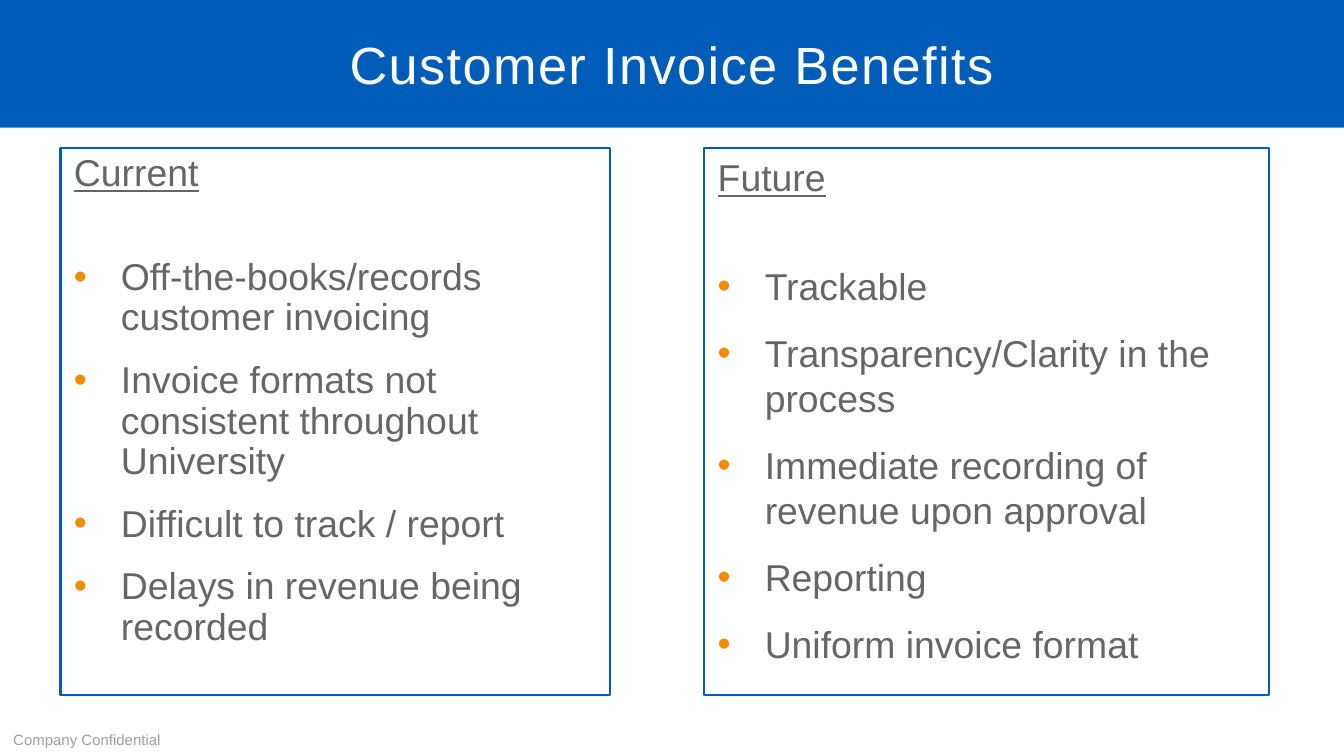
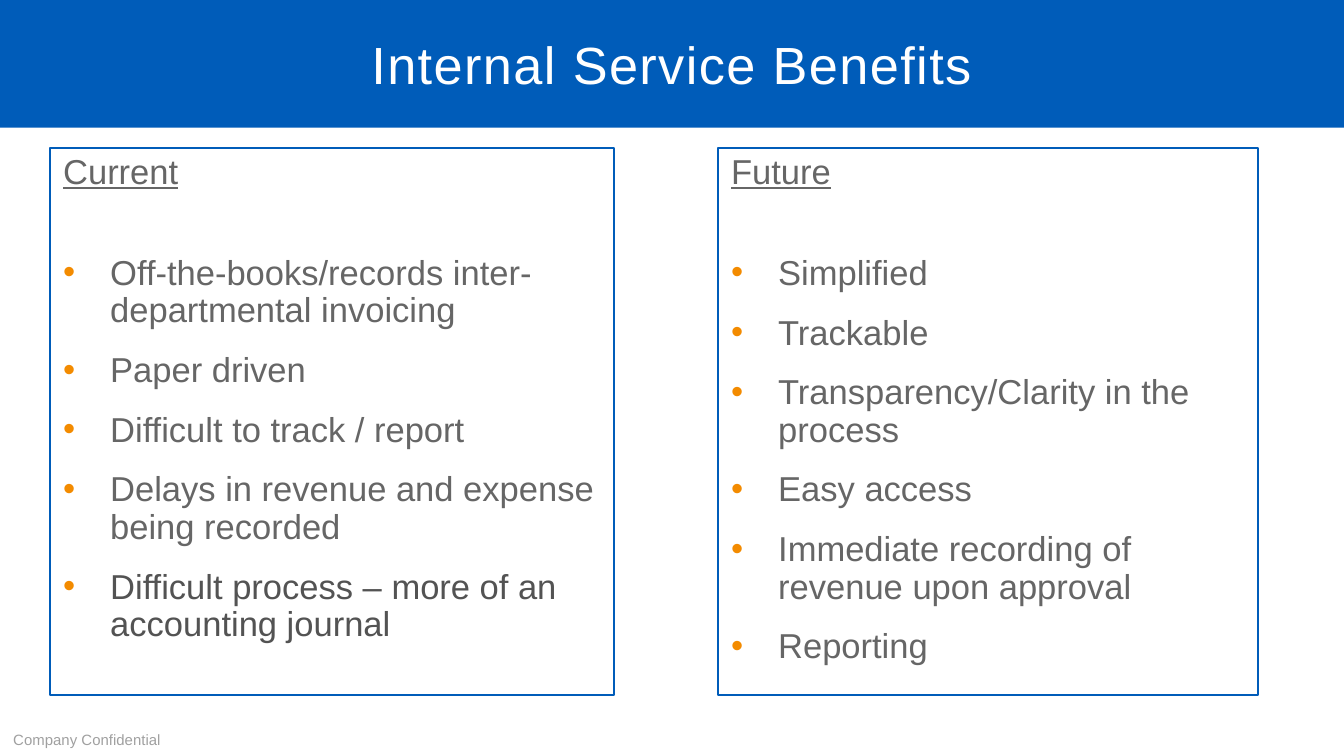
from lxml import etree
from pptx import Presentation
from pptx.dml.color import RGBColor
from pptx.enum.text import MSO_ANCHOR, MSO_AUTO_SIZE, PP_ALIGN
from pptx.oxml.ns import qn
from pptx.util import Emu, Pt

TOP, MIDDLE, BOTTOM = MSO_ANCHOR.TOP, MSO_ANCHOR.MIDDLE, MSO_ANCHOR.BOTTOM
CENTER, LEFT = PP_ALIGN.CENTER, PP_ALIGN.LEFT
NO_FIT = MSO_AUTO_SIZE.NONE
TWO_CONTENT = 3

# Shared look: 200 px to the inch
PX = 4572
FONT = "Arial"
COLORS = {
    "blue": "005CB9",
    "orange": "F38B00",
    "white": "FFFFFF",
    "text": "666666",
    "dark": "535353",
    "footer": "A0A0A0",
}
PAGE_WIDTH, PAGE_HEIGHT = 2000, 1125
BAND_HEIGHT = 190
PANEL_TOP, PANEL_HEIGHT = 220, 814
INDENT = 70
FOOTER = "Company Confidential"

# Each panel: left, width, line spacing, heading, bullets
PAGES = [
    ("Customer Invoice Benefits", 20, [
        (90, 818, 0.9, "Current", [
            "Off-the-books/records customer invoicing",
            "Invoice formats not consistent throughout University",
            "Difficult to track / report",
            "Delays in revenue being recorded",
        ]),
        (1048, 840, 1.0, "Future", [
            "Trackable",
            "Transparency/Clarity in the process",
            "Immediate recording of revenue upon approval",
            "Reporting",
            "Uniform invoice format",
        ]),
    ]),
    ("Internal Service Benefits", 18.5, [
        (74, 840, 0.9, "Current", [
            "Off-the-books/records inter-departmental invoicing",
            "Paper driven",
            "Difficult to track / report",
            "Delays in revenue and expense being recorded",
            "Difficult process – more of an accounting journal",
        ]),
        (1068, 804, 0.9, "Future", [
            "Simplified",
            "Trackable",
            "Transparency/Clarity in the process",
            "Easy access",
            "Immediate recording of revenue upon approval",
            "Reporting",
        ]),
    ]),
]
DARK_BULLET = "Difficult process – more of an accounting journal"


def place(box, left, top, width, height, anchor):
    box.left, box.top = Emu(left * PX), Emu(top * PX)
    box.width, box.height = Emu(width * PX), Emu(height * PX)
    frame = box.text_frame
    frame.word_wrap = True
    frame.auto_size = NO_FIT
    frame.vertical_anchor = anchor
    return frame


def style(para, size, color, align=LEFT):
    para.alignment = align
    for span in para.runs:
        span.font.name = FONT
        span.font.size = Pt(size)
        span.font.color.rgb = RGBColor.from_string(COLORS[color])


deck = Presentation()
deck.slide_width = Emu(PAGE_WIDTH * PX)
deck.slide_height = Emu(PAGE_HEIGHT * PX)

for title_text, size, panels in PAGES:
    page = deck.slides.add_slide(deck.slide_layouts[TWO_CONTENT])

    # Title band
    title = page.shapes.title
    frame = place(title, 0, 0, PAGE_WIDTH, BAND_HEIGHT, MIDDLE)
    title.fill.solid()
    title.fill.fore_color.rgb = RGBColor.from_string(COLORS["blue"])
    frame.text = title_text
    style(frame.paragraphs[0], 28, "white", CENTER)
    frame.paragraphs[0].runs[0].font._element.set("spc", "80")

    # Current and future panels
    for index, (left, width, spacing, heading, bullets) in enumerate(panels, 1):
        panel = page.placeholders[index]
        frame = place(panel, left, PANEL_TOP, width, PANEL_HEIGHT, TOP)
        panel.line.color.rgb = RGBColor.from_string(COLORS["blue"])
        panel.line.width = Pt(1.25)
        frame.text = "\n".join([heading] + bullets)
        for para in frame.paragraphs:
            style(para, size, "dark" if para.text == DARK_BULLET else "text")
            para.line_spacing = spacing
            para.space_before = para.space_after = Pt(6)
            props = para._p.get_or_add_pPr()
            if para.text == heading:
                para.space_after = Pt(28)
                para.runs[0].font.underline = True
                props.set("marL", "0")
                props.set("indent", "0")
                etree.SubElement(props, qn("a:buNone"))
                continue
            props.set("marL", str(INDENT * PX))
            props.set("indent", str(-INDENT * PX))
            bullet_color = etree.SubElement(props, qn("a:buClr"))
            etree.SubElement(bullet_color, qn("a:srgbClr"), val=COLORS["orange"])
            etree.SubElement(props, qn("a:buFont"), typeface=FONT)
            etree.SubElement(props, qn("a:buChar"), char="•")

    # Footer
    footer = page.shapes.add_textbox(0, 0, 0, 0)
    frame = place(footer, 0, 1064, 676, 60, BOTTOM)
    frame.text = FOOTER
    style(frame.paragraphs[0], 8, "footer")

deck.save("out.pptx")
